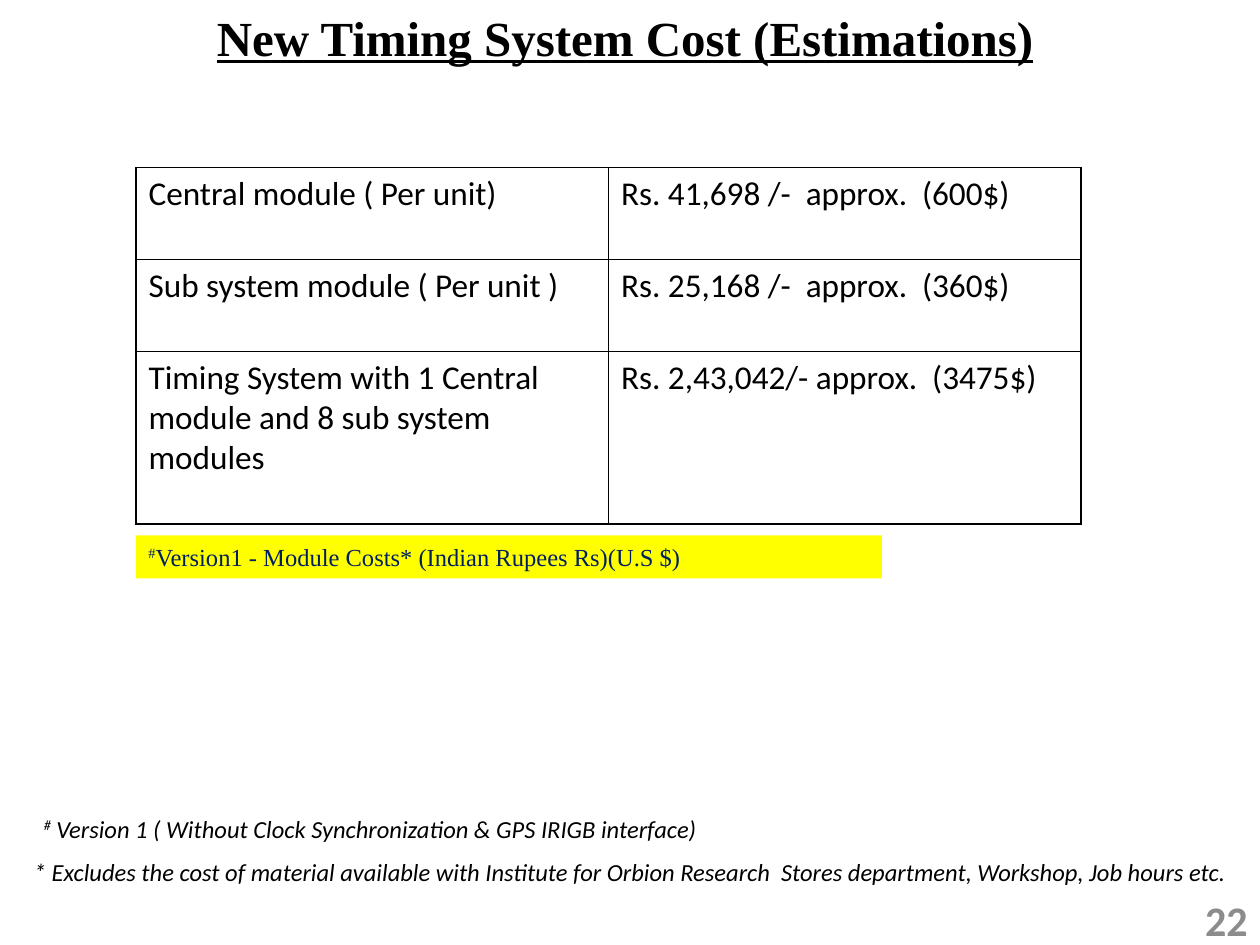
from lxml import etree
from pptx import Presentation
from pptx.dml.color import RGBColor
from pptx.enum.shapes import MSO_SHAPE
from pptx.enum.text import MSO_ANCHOR, PP_ALIGN
from pptx.oxml.ns import qn
from pptx.util import Inches, Pt

BLACK = RGBColor(0x00, 0x00, 0x00)
GRAY = RGBColor(0x8C, 0x8C, 0x8C)
NAVY = RGBColor(0x00, 0x20, 0x60)
YELLOW = RGBColor(0xFF, 0xFF, 0x00)
LEFT, CENTER, RIGHT = PP_ALIGN.LEFT, PP_ALIGN.CENTER, PP_ALIGN.RIGHT
TOP, MIDDLE = MSO_ANCHOR.TOP, MSO_ANCHOR.MIDDLE
RECTANGLE = MSO_SHAPE.RECTANGLE
SANS, SERIF = "Calibri", "Times New Roman"

COSTS = [
    ("Central module ( Per unit)", "Rs. 41,698 /-  approx.  (600$)"),
    ("Sub system module ( Per unit )", "Rs. 25,168 /-  approx.  (360$)"),
    ("Timing System with 1 Central module and 8 sub system modules",
     "Rs. 2,43,042/- approx.  (3475$)"),
]


class SlideBuilder:
    def __init__(self, slide):
        self.slide = slide

    def fill_text(self, frame, text, size, font=SANS, color=BLACK, align=LEFT,
                  mark="", bold=False, italic=False, underline=False):
        paragraph = frame.paragraphs[0]
        paragraph.alignment = align
        style = paragraph.font
        style.name, style.size = font, Pt(size)
        style.bold, style.italic, style.underline = bold, italic, underline
        style.color.rgb = color
        if mark:
            superscript = paragraph.add_run()
            superscript.text = mark
            superscript._r.get_or_add_rPr().set("baseline", "30000")
        paragraph.add_run().text = text
        return paragraph

    def text(self, left, top, width, height, text, size,
             wrap=True, anchor=TOP, **style):
        box = self.slide.shapes.add_textbox(
            Inches(left), Inches(top), Inches(width), Inches(height))
        box.text_frame.word_wrap = wrap
        box.text_frame.vertical_anchor = anchor
        return self.fill_text(box.text_frame, text, size, **style)

    def banner(self, left, top, width, height, fill, text, size, **style):
        band = self.slide.shapes.add_shape(
            RECTANGLE, Inches(left), Inches(top), Inches(width), Inches(height))
        band.shadow.inherit = False
        band.fill.solid()
        band.fill.fore_color.rgb = fill
        band.line.fill.background()
        band.text_frame.vertical_anchor = TOP
        self.fill_text(band.text_frame, text, size, **style)

    def border(self, cell, color):
        properties = cell._tc.get_or_add_tcPr()
        for index, side in enumerate(("a:lnL", "a:lnR", "a:lnT", "a:lnB")):
            line = etree.Element(qn(side), w=str(Pt(1)))
            fill = etree.SubElement(line, qn("a:solidFill"))
            etree.SubElement(fill, qn("a:srgbClr"), val=str(color))
            properties.insert(index, line)

    def table(self, left, top, widths, heights, rows, size):
        grid = self.slide.shapes.add_table(
            len(rows), len(widths), Inches(left), Inches(top),
            Inches(sum(widths)), Inches(sum(heights))).table
        grid.first_row = grid.horz_banding = False
        for column, width in zip(grid.columns, widths):
            column.width = Inches(width)
        for row, height, values in zip(grid.rows, heights, rows):
            row.height = Inches(height)
            for cell, value in zip(row.cells, values):
                cell.fill.background()
                self.fill_text(cell.text_frame, value, size)
                self.border(cell, BLACK)


def main():
    deck = Presentation()
    deck.slide_width, deck.slide_height = Inches(10), Inches(7.5)
    page = SlideBuilder(deck.slides.add_slide(deck.slide_layouts[6]))

    page.text(7.67, 7.1, 2.33, 0.4, "22", 24, anchor=MIDDLE,
              color=GRAY, align=RIGHT, bold=True)
    title = page.text(0.25, 0.06, 9.42, 0.53, "New Timing System Cost (Estimations)",
                      28, font=SERIF, align=CENTER, bold=True, underline=True)
    title.line_spacing = 0.9
    page.banner(1.08, 4.25, 5.92, 0.34, YELLOW,
                "Version1 - Module Costs* (Indian Rupees Rs)(U.S $)", 14,
                font=SERIF, color=NAVY, mark="#")
    page.text(0.17, 6.75, 9.79, 0.34,
              "* Excludes the cost of material available with Institute for Orbion "
              "Research  Stores department, Workshop, Job hours etc.",
              14, wrap=False, italic=True)
    page.table(1.08, 1.33, [3.75, 3.75], [0.73, 0.73, 1.37], COSTS, 19)
    page.text(0.25, 6.41, 5.44, 0.34,
              " Version 1 ( Without Clock Synchronization & GPS IRIGB interface)",
              14, wrap=False, italic=True, mark="#")
    deck.save("out.pptx")


if __name__ == "__main__":
    main()
